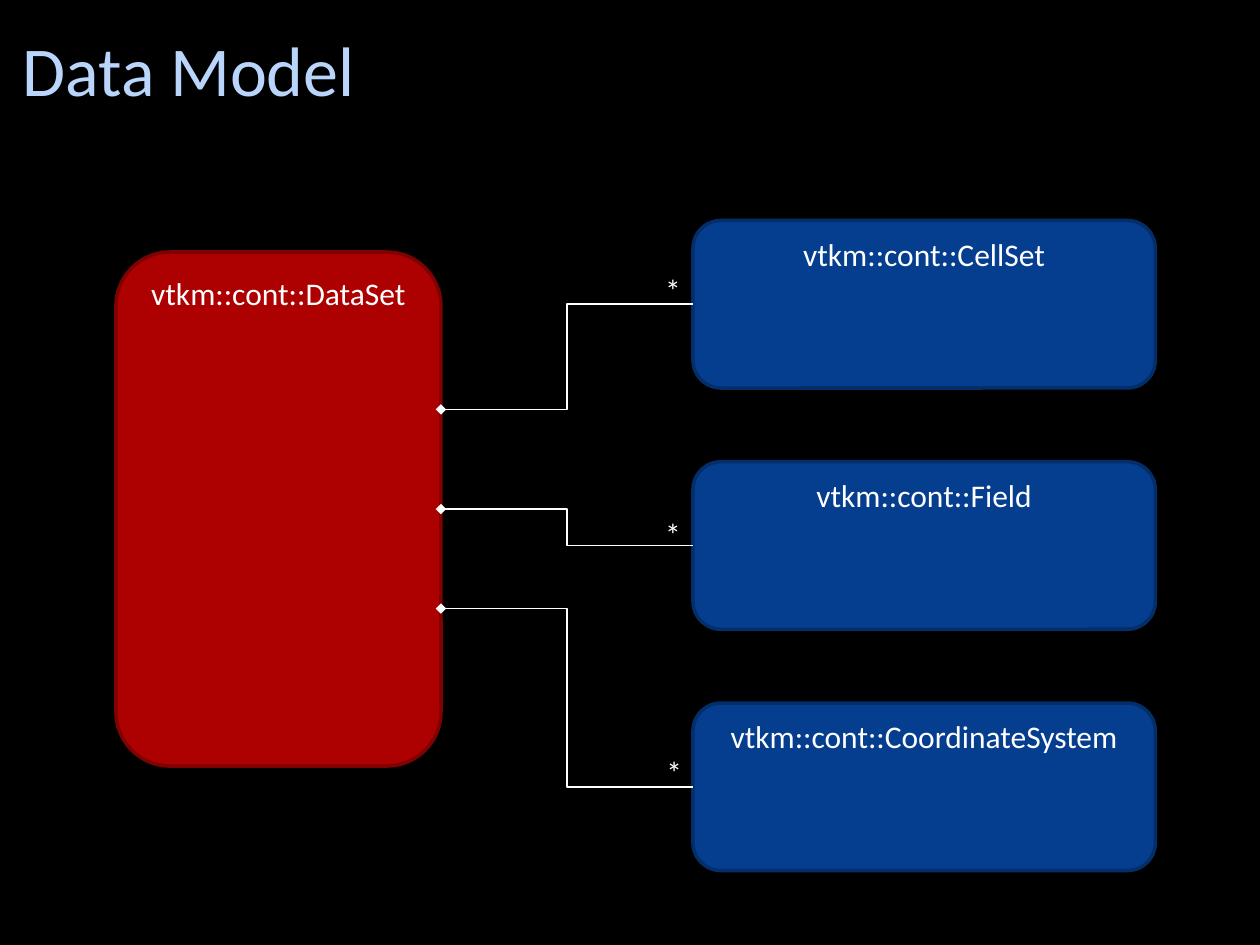
from lxml import etree
from pptx import Presentation
from pptx.dml.color import RGBColor
from pptx.enum import shapes, text
from pptx.oxml.ns import qn
from pptx.util import Inches, Pt

COLORS = {
    "background": "000000",
    "title": "BAD5FC",
    "white": "FFFFFF",
    "red": "AD0101",
    "red_edge": "800101",
    "blue": "063E8F",
    "blue_edge": "042E6A",
}


def write(shape, words, size, color, align, anchor):
    frame = shape.text_frame
    frame.text = words
    frame.vertical_anchor = anchor
    para = frame.paragraphs[0]
    para.alignment = align
    span = para.runs[0]
    for name, value in {"name": "Calibri", "size": Pt(size)}.items():
        setattr(span.font, name, value)
    span.font.color.rgb = RGBColor.from_string(COLORS[color])
    return frame


def add_class_box(words, color, left, top, width, height):
    """Add a rounded box with the class name at its top."""
    box = page.shapes.add_shape(
        shapes.MSO_SHAPE.ROUNDED_RECTANGLE,
        Inches(left), Inches(top), Inches(width), Inches(height))
    box.shadow.inherit = False
    box.fill.solid()
    box.fill.fore_color.rgb = RGBColor.from_string(COLORS[color])
    box.line.color.rgb = RGBColor.from_string(COLORS[color + "_edge"])
    box.line.width = Pt(2)
    frame = write(box, words, 18, "white", text.PP_ALIGN.CENTER, text.MSO_ANCHOR.TOP)
    frame.word_wrap = True


deck = Presentation()
deck.slide_width, deck.slide_height = Inches(10), Inches(7.5)
page = deck.slides.add_slide(deck.slide_layouts[5])
page.background.fill.solid()
page.background.fill.fore_color.rgb = RGBColor.from_string(COLORS["background"])

title = page.shapes.title
place = {"left": 0.08, "top": 0, "width": 8.83, "height": 1.08}
for name, value in place.items():
    setattr(title, name, Inches(value))
write(title, "Data Model", 40, "title", text.PP_ALIGN.LEFT, text.MSO_ANCHOR.MIDDLE)

add_class_box("vtkm::cont::DataSet", "red", 0.92, 2, 2.58, 4.08)

# Class name, left and top of its multiplicity mark
parts = [
    ("vtkm::cont::CellSet", 5.18, 2.1),
    ("vtkm::cont::Field", 5.18, 4.04),
    ("vtkm::cont::CoordinateSystem", 5.19, 5.93),
]
part_left, part_height = 5.5, 1.33
for index, (class_name, mark_left, mark_top) in enumerate(parts):
    part_top = 1.75 + 1.915 * index
    add_class_box(class_name, "blue", part_left, part_top, 3.67, part_height)

    link = page.shapes.add_connector(
        shapes.MSO_CONNECTOR.ELBOW,
        Inches(3.5), Inches(3.25 + 0.79 * index),
        Inches(part_left), Inches(part_top + part_height / 2))
    link.line.color.rgb = RGBColor.from_string(COLORS["white"])
    link.line.width = Pt(1)
    properties = link._element.spPr
    etree.SubElement(properties.find(qn("a:ln")), qn("a:headEnd"), type="diamond")
    etree.SubElement(properties, qn("a:effectLst"))

    mark = page.shapes.add_textbox(
        Inches(mark_left), Inches(mark_top), Inches(0.33), Inches(0.4))
    frame = write(mark, "*", 18, "white", text.PP_ALIGN.LEFT, text.MSO_ANCHOR.TOP)
    frame.word_wrap = False
    frame.auto_size = text.MSO_AUTO_SIZE.SHAPE_TO_FIT_TEXT

deck.save("out.pptx")
